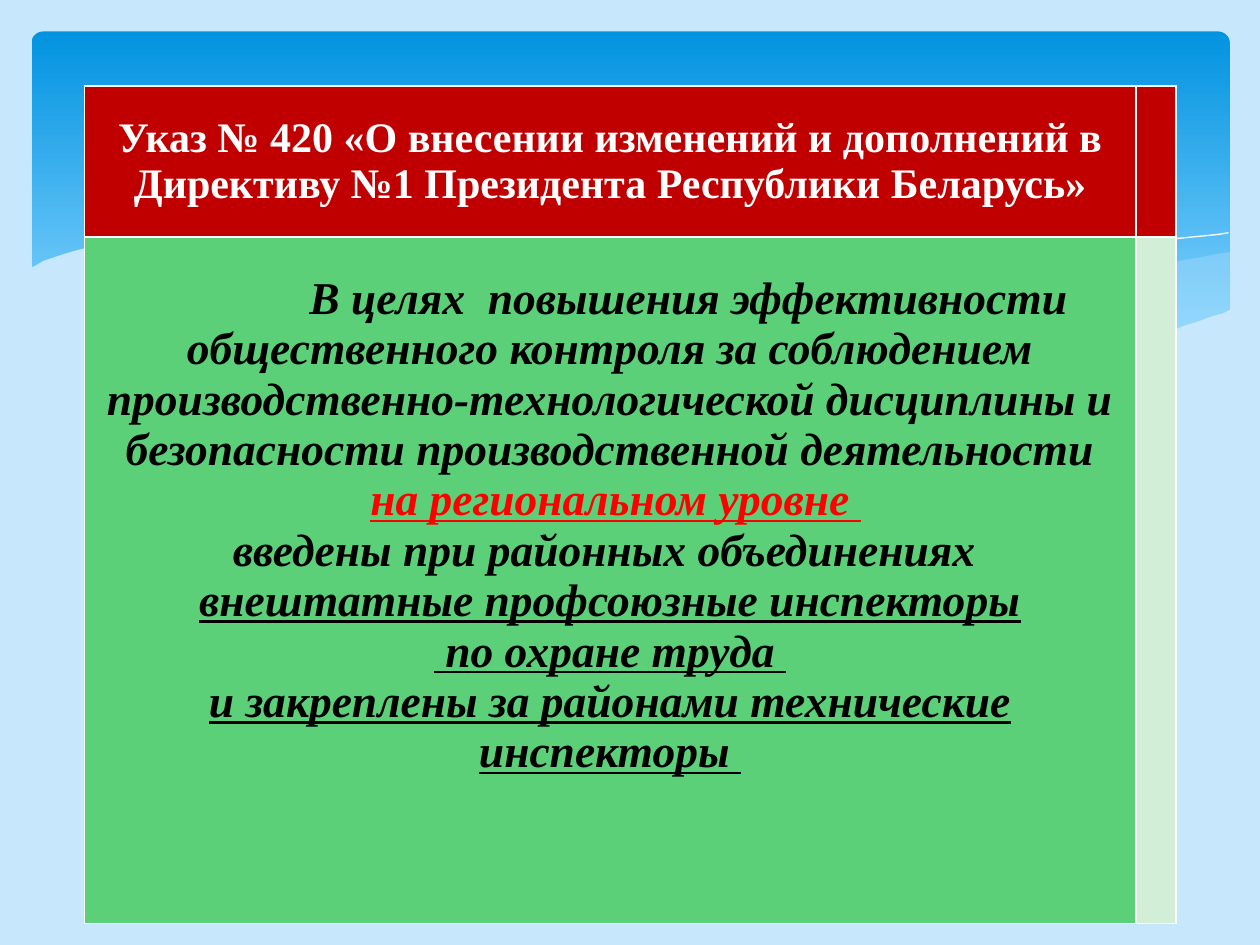
"""Build a slide with a decree table over a wavy blue banner."""
from dataclasses import dataclass
from typing import Optional

import lxml.etree
import pptx
import pptx.dml.color
import pptx.enum.shapes
import pptx.enum.text
import pptx.oxml.ns
import pptx.util

Pt = pptx.util.Pt
qn = pptx.oxml.ns.qn
Point = tuple[float, float]


@dataclass(frozen=True)
class Theme:
    font: str = "Times New Roman"
    sky: str = "C6E7FC"
    banner_top: str = "0293E0"
    banner_bottom: str = "83D3FE"
    white: str = "FFFFFF"
    black: str = "000000"
    accent: str = "FF0000"
    header: str = "C00000"
    body: str = "5BD078"
    side: str = "D2EED6"
    title_size: float = 24
    body_size: float = 26
    border: float = 1


@dataclass(frozen=True)
class Wave:
    edges: list[list[Point]]
    alpha: Optional[int] = None
    outline: bool = False


@dataclass(frozen=True)
class TextRun:
    text: str
    color: str
    size: float
    italic: bool = True
    underline: bool = False


@dataclass(frozen=True)
class CellSpec:
    row: int
    col: int
    fill: str
    paragraphs: tuple[tuple[TextRun, ...], ...] = ()
    middle: bool = False
    top: float = 0
    first_indent: float = 0


THEME = Theme()

WAVES = [
    Wave([
        [(702.7, 144), (663, 151.2), (620, 160.6), (561, 174.2), (525, 182.2), (476, 190.8)],
        [(476, 190.8), (507.6, 195.1), (545, 198.7), (578.2, 200.2), (614.9, 198.7),
         (651.6, 193.7), (678.2, 186.5), (702.7, 177.8)],
    ], alpha=29),
    Wave([
        [(643, 196.6), (581, 187.2), (533.5, 177.8), (452.9, 159.8), (399.6, 147.6),
         (352.1, 139.7), (302.4, 134.6), (259.9, 133.2), (205.9, 137.5)],
        [(205.9, 137.5), (260.6, 146.2), (323.3, 159.8), (381.6, 172.8), (432.7, 183.6),
         (478.8, 191.5), (529.9, 198), (581, 200.2), (617, 199.4), (643, 196.6)],
    ], alpha=40),
    Wave([
        [(222.5, 140.4), (261.4, 136.1), (299.5, 134.6), (352.1, 136.8), (400.3, 141.8),
         (457.9, 149.8), (523.4, 162.7), (598.3, 180.7), (653, 195.8)],
    ], outline=True),
    Wave([
        [(441.4, 185), (500.4, 169.2), (558.7, 155.5), (623.5, 143.3), (665.3, 136.8),
         (702, 133.2)],
    ], outline=True),
    Wave([
        [(703.4, 177.1), (676.8, 186.5), (647.3, 193.7), (612, 198), (582.5, 199.4),
         (535.7, 197.3), (481, 190.8), (416.9, 180), (362.2, 167.8), (301, 153.4),
         (244.8, 141.8), (195.1, 135.4), (139, 132.5), (105.1, 133.2), (68.4, 137.5),
         (37.4, 144.7), (16.6, 153.4)],
        [(16.6, 236.9), (703.4, 236.9)],
    ]),
]


def body_run(text: str, color: str = THEME.black, underline: bool = False) -> TextRun:
    return TextRun(text, color, THEME.body_size, underline=underline)


CELLS = [
    CellSpec(0, 0, THEME.header, ((TextRun(
        "Указ № 420 «О внесении изменений и дополнений в "
        "Директиву №1 Президента Республики Беларусь»",
        THEME.white, THEME.title_size, italic=False),),), middle=True),
    CellSpec(0, 1, THEME.header),
    CellSpec(1, 0, THEME.body, (
        (body_run("В целях  повышения эффективности общественного контроля за соблюдением "
                  "производственно-технологической дисциплины и безопасности "
                  "производственной деятельности"),),
        (body_run(" "), body_run("на региональном уровне ", THEME.accent, True)),
        (body_run("введены при районных объединениях "),),
        (body_run("внештатные профсоюзные инспекторы", underline=True),),
        (body_run(" по охране труда ", underline=True),),
        (body_run("и закреплены за районами технические инспекторы ", underline=True),),
    ), top=21, first_indent=90),
    CellSpec(1, 1, THEME.side),
]


def rgb(color: str) -> pptx.dml.color.RGBColor:
    return pptx.dml.color.RGBColor.from_string(color)


def smooth(knots: list[Point], steps: int = 4) -> list[Point]:
    if len(knots) < 3:
        return knots
    padded = [knots[0], *knots, knots[-1]]
    points = [knots[0]]
    for a, b, c, d in zip(padded, padded[1:], padded[2:], padded[3:]):
        for i in range(1, steps + 1):
            t = i / steps
            x, y = (
                (2 * q + (r - p) * t + (2 * p - 5 * q + 4 * r - s) * t ** 2
                 + (3 * q - p - 3 * r + s) * t ** 3) / 2
                for p, q, r, s in zip(a, b, c, d)
            )
            points.append((x, y))
    return points


def draw_banner(slide) -> None:
    sp = slide.shapes.add_shape(pptx.enum.shapes.MSO_SHAPE.ROUNDED_RECTANGLE,
                                Pt(18), Pt(18), Pt(684.7), Pt(194.4))
    sp.adjustments[0] = 0.034
    sp.shadow.inherit = False
    sp.line.fill.background()
    sp.fill.gradient()
    sp.fill.gradient_angle = 270
    stops = ((0, THEME.banner_top), (0.9, THEME.banner_bottom))
    for stop, (position, color) in zip(sp.fill.gradient_stops, stops):
        stop.position = position
        stop.color.rgb = rgb(color)


def draw_wave(slide, wave: Wave) -> None:
    points = [point for edge in wave.edges for point in smooth(edge)]
    builder = slide.shapes.build_freeform(*points[0], scale=Pt(1))
    builder.add_line_segments(points[1:], close=not wave.outline)
    sp = builder.convert_to_shape()
    sp.shadow.inherit = False
    if wave.outline:
        sp.fill.background()
        sp.line.color.rgb = rgb(THEME.white)
        sp.line.width = Pt(0)
        return
    sp.line.fill.background()
    sp.fill.solid()
    sp.fill.fore_color.rgb = rgb(THEME.sky)
    if wave.alpha is not None:
        color = sp.fill._xPr.find(qn("a:solidFill"))[0]
        lxml.etree.SubElement(color, qn("a:alpha"), val=str(wave.alpha * 1000))


def fill_cell(cell, spec: CellSpec) -> None:
    tc_pr = cell._tc.get_or_add_tcPr()
    for side in ("lnL", "lnR", "lnT", "lnB"):
        ln = lxml.etree.SubElement(tc_pr, qn(f"a:{side}"), w=str(Pt(THEME.border)))
        solid = lxml.etree.SubElement(ln, qn("a:solidFill"))
        lxml.etree.SubElement(solid, qn("a:srgbClr"), val=THEME.white)
    cell.fill.solid()
    cell.fill.fore_color.rgb = rgb(spec.fill)
    cell.margin_left = cell.margin_right = Pt(4.3)
    cell.margin_top, cell.margin_bottom = Pt(spec.top), Pt(0)
    anchor = pptx.enum.text.MSO_ANCHOR
    cell.vertical_anchor = anchor.MIDDLE if spec.middle else anchor.TOP
    tf = cell.text_frame
    for i, runs in enumerate(spec.paragraphs):
        p = tf.add_paragraph() if i else tf.paragraphs[0]
        p.alignment = pptx.enum.text.PP_ALIGN.CENTER
        if i == 0 and spec.first_indent:
            p._p.get_or_add_pPr().set("indent", str(Pt(spec.first_indent)))
        for run in runs:
            r = p.add_run()
            r.text = run.text
            r.font.name, r.font.size, r.font.bold = THEME.font, Pt(run.size), True
            r.font.italic, r.font.underline = run.italic, run.underline
            r.font.color.rgb = rgb(run.color)


def draw_table(slide) -> None:
    widths, heights = (601, 22.8), (86.4, 392.4)
    table = slide.shapes.add_table(len(heights), len(widths), Pt(48.2), Pt(49),
                                   Pt(sum(widths)), Pt(sum(heights))).table
    for column, width in zip(table.columns, widths):
        column.width = Pt(width)
    for row, height in zip(table.rows, heights):
        row.height = Pt(height)
    for spec in CELLS:
        fill_cell(table.cell(spec.row, spec.col), spec)


def main() -> None:
    prs = pptx.Presentation()
    prs.slide_width, prs.slide_height = Pt(720), Pt(540)
    slide = prs.slides.add_slide(prs.slide_layouts[6])
    slide.background.fill.solid()
    slide.background.fill.fore_color.rgb = rgb(THEME.sky)
    draw_banner(slide)
    for wave in WAVES:
        draw_wave(slide, wave)
    draw_table(slide)
    prs.save("out.pptx")


if __name__ == "__main__":
    main()
